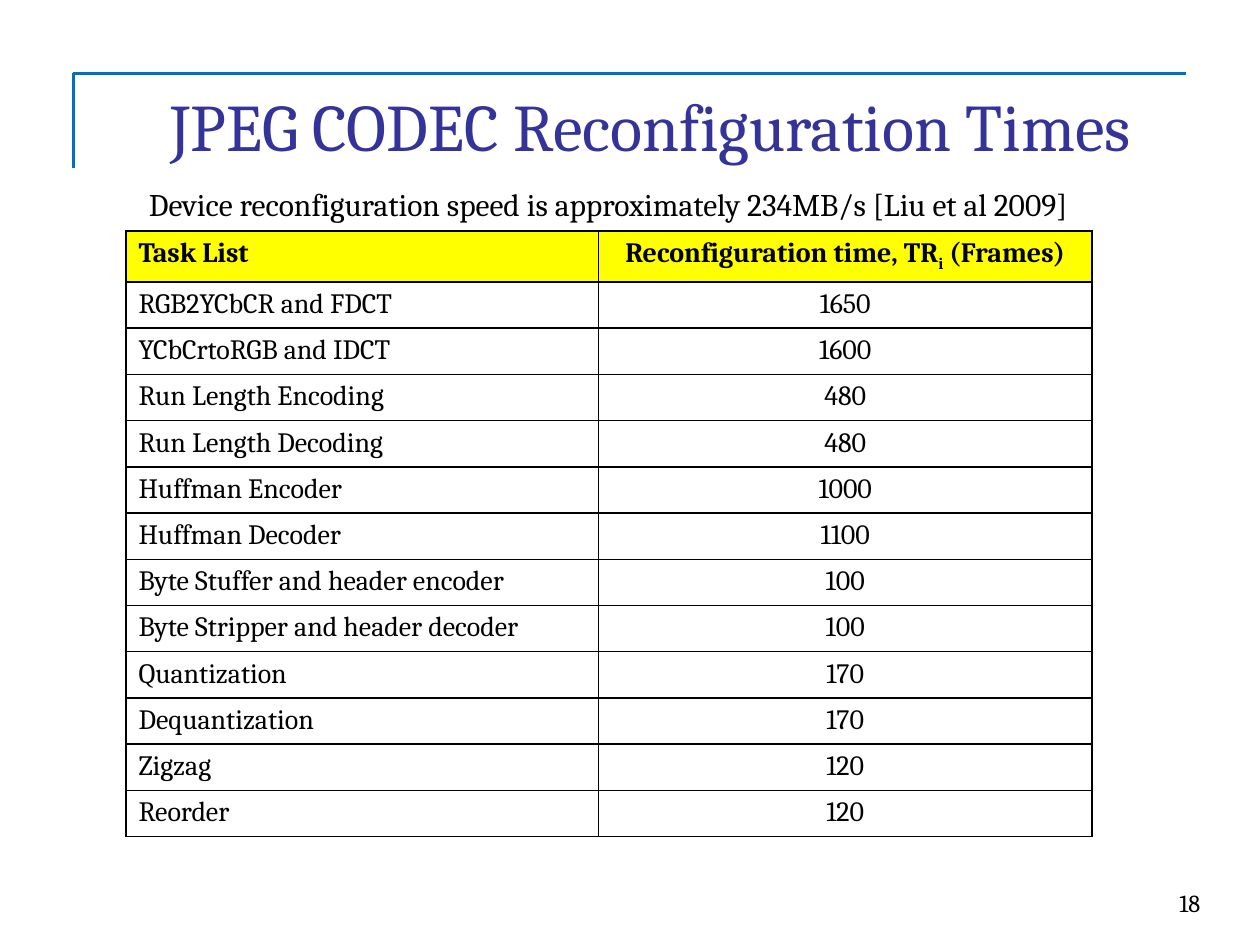
from lxml import etree
from pptx import Presentation, util as u
from pptx.dml.color import RGBColor
from pptx.enum import shapes, text
from pptx.oxml.ns import qn

Pt = u.Pt
LEFT, CENTER, RIGHT = text.PP_ALIGN.LEFT, text.PP_ALIGN.CENTER, text.PP_ALIGN.RIGHT
BLACK, BLUE, INDIGO, YELLOW = "000000", "0070C0", "333399", "FFFF00"

# Content: (text, box in points, size, colour, alignment)
labels = [
    ("JPEG CODEC Reconfiguration Times", (42, 45, 660, 53), 38, INDIGO, CENTER),
    ("18 ", (546, 504, 150, 36), 14, BLACK, RIGHT),
    ("Device reconfiguration speed is approximately 234MB/s [Liu et al 2009]",
     (78, 102, 552, 29), 18, BLACK, LEFT),
]
# Header cells are lists of (text, baseline shift in percent)
header = [
    [("Task List", 0)],
    [("Reconfiguration time, TR", 0), ("i", -25), (" (Frames)", 0)],
]
tasks = [
    ("RGB2YCbCR and FDCT", 1650),
    ("YCbCrtoRGB and IDCT", 1600),
    ("Run Length Encoding", 480),
    ("Run Length Decoding", 480),
    ("Huffman Encoder", 1000),
    ("Huffman Decoder", 1100),
    ("Byte Stuffer and header encoder", 100),
    ("Byte Stripper and header decoder", 100),
    ("Quantization", 170),
    ("Dequantization", 170),
    ("Zigzag", 120),
    ("Reorder", 120),
]
frame_lines = [(42, 42, 678, 42), (42, 42, 42, 96)]
column_widths = [270, 282]
row_height = 24


def rgb(value):
    return RGBColor.from_string(value)


def write(paragraph, runs, size, color, align, bold=False):
    paragraph.alignment = align
    for words, shift in runs:
        run = paragraph.add_run()
        run.text = words
        style = {"name": "Cambria", "size": Pt(size), "bold": bold}
        for key, value in style.items():
            setattr(run.font, key, value)
        run.font.color.rgb = rgb(color)
        if shift:
            run.font._element.set("baseline", str(shift * 1000))


def add_borders(cell):
    properties = cell._tc.get_or_add_tcPr()
    for position, side in enumerate(("lnL", "lnR", "lnT", "lnB")):
        border = etree.Element(qn(f"a:{side}"), w=str(Pt(1)))
        fill = etree.SubElement(border, qn("a:solidFill"))
        etree.SubElement(fill, qn("a:srgbClr"), val=BLACK)
        properties.insert(position, border)


presentation = Presentation()
presentation.slide_width, presentation.slide_height = Pt(720), Pt(540)
slide = presentation.slides.add_slide(presentation.slide_layouts[6])

# Corner lines
for ends in frame_lines:
    line = slide.shapes.add_connector(shapes.MSO_CONNECTOR.STRAIGHT, *map(Pt, ends))
    line.line.color.rgb = rgb(BLUE)
    line.line.width = Pt(2.25)
    etree.SubElement(line._element.spPr, qn("a:effectLst"))

# Title, page number and caption
for words, box, size, color, align in labels:
    label = slide.shapes.add_textbox(*map(Pt, box)).text_frame
    label.word_wrap = True
    write(label.paragraphs[0], [(words, 0)], size, color, align)

# Task table
rows = [header] + [[[(task, 0)], [(str(frames), 0)]] for task, frames in tasks]
times = slide.shapes.add_table(
    len(rows), len(column_widths), Pt(72), Pt(132),
    Pt(sum(column_widths)), Pt(row_height * len(rows))).table
for column, width in zip(times.columns, column_widths):
    column.width = Pt(width)
for r, row in enumerate(rows):
    times.rows[r].height = Pt(row_height)
    for c, runs in enumerate(row):
        cell = times.cell(r, c)
        if r == 0:
            cell.fill.solid()
            cell.fill.fore_color.rgb = rgb(YELLOW)
        else:
            cell.fill.background()
        add_borders(cell)
        write(cell.text_frame.paragraphs[0], runs, 16, BLACK,
              CENTER if c else LEFT, bold=r == 0)

presentation.save("out.pptx")
